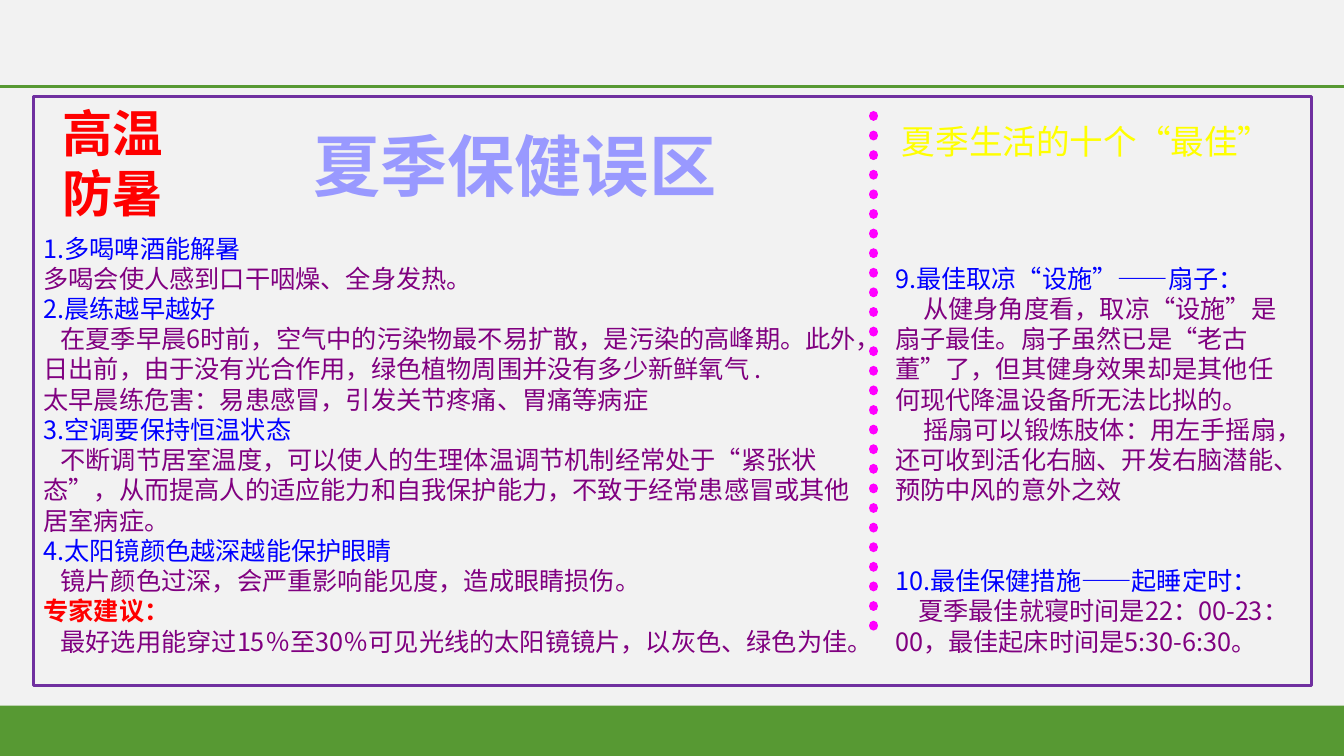
"""Build the summer health slide with its two text columns."""
from dataclasses import dataclass

from lxml import etree
from pptx import Presentation, util as u
from pptx.dml.color import RGBColor
from pptx.enum import dml, lang, shapes, text
from pptx.oxml import ns

COLOURS = {
    "paper": "F2F2F2", "green": "579933", "frame": "7030A0", "dots": "FF00FF",
    "warning": "FF0000", "topic": "0000FF", "body": "800080",
    "headline": "9999FF", "best": "FFFF00",
}
FONT = "Noto Sans CJK SC"
WIDTH, HEIGHT = u.Inches(13.33), u.Inches(7.5)
LINE_RATIO = 1.2


@dataclass
class Area:
    """Position and size in percent of the slide."""
    left: float
    top: float
    width: float
    height: float

    def lengths(self) -> dict:
        return {
            "left": int(WIDTH * self.left / 100),
            "top": int(HEIGHT * self.top / 100),
            "width": int(WIDTH * self.width / 100),
            "height": int(HEIGHT * self.height / 100),
        }


@dataclass
class Line:
    """One paragraph with its look."""
    wording: str
    colour: str = "body"
    size: int = 18
    bold: bool = False
    indent: float = 0
    before: float = 0
    align: text.PP_ALIGN = text.PP_ALIGN.LEFT


def apply(target, values: dict) -> None:
    for key, value in values.items():
        setattr(target, key, value)


def rgb(name: str) -> RGBColor:
    return RGBColor.from_string(COLOURS[name])


def write(holder, area: Area, lines: list[Line], wrap: bool = True) -> None:
    apply(holder, area.lengths())
    frame = holder.text_frame
    apply(frame, {
        "word_wrap": wrap,
        "auto_size": text.MSO_AUTO_SIZE.NONE,
        "vertical_anchor": text.MSO_ANCHOR.TOP,
        "margin_left": u.Inches(0.1), "margin_right": u.Inches(0.1),
        "margin_top": u.Inches(0.05), "margin_bottom": u.Inches(0.05),
    })
    for number, line in enumerate(lines):
        paragraph = frame.add_paragraph() if number else frame.paragraphs[0]
        properties = paragraph._p.get_or_add_pPr()
        properties.set("marL", "0")
        properties.set("indent", str(u.Inches(line.indent)))
        etree.SubElement(properties, ns.qn("a:buNone"))
        apply(paragraph, {
            "alignment": line.align,
            "line_spacing": u.Pt(line.size * LINE_RATIO),
            "space_before": u.Pt(line.before),
            "space_after": u.Pt(0),
        })
        run = paragraph.add_run()
        run.text = line.wording
        apply(run.font, {
            "name": FONT, "size": u.Pt(line.size), "bold": line.bold,
            "language_id": lang.MSO_LANGUAGE_ID.SIMPLIFIED_CHINESE,
        })
        run.font.color.rgb = rgb(line.colour)
        east_asian = etree.SubElement(run._r.get_or_add_rPr(), ns.qn("a:ea"))
        east_asian.set("typeface", FONT)


def add_box(slide, area: Area, fill: str = "", outline: str = "") -> None:
    box = slide.shapes.add_shape(shapes.MSO_SHAPE.RECTANGLE, **area.lengths())
    box.shadow.inherit = False
    for part, colour in ((box.fill, fill), (box.line.fill, outline)):
        if colour:
            part.solid()
            part.fore_color.rgb = rgb(colour)
        else:
            part.background()
    if outline:
        box.line.width = u.Pt(2.25)


def add_rule(slide, area: Area, colour: str, weight: float, dotted: bool = False) -> None:
    place = area.lengths()
    rule = slide.shapes.add_connector(
        shapes.MSO_CONNECTOR.STRAIGHT, place["left"], place["top"],
        place["left"] + place["width"], place["top"] + place["height"])
    rule.line.color.rgb = rgb(colour)
    rule.line.width = u.Pt(weight)
    if dotted:
        rule.line.dash_style = dml.MSO_LINE.ROUND_DOT
        rule.line._get_or_add_ln().set("cap", "rnd")
    etree.SubElement(rule._element.spPr, ns.qn("a:effectLst"))


MISTAKES = [
    Line("1.多喝啤酒能解暑", "topic"),
    Line("多喝会使人感到口干咽燥、全身发热。"),
    Line("2.晨练越早越好", "topic"),
    Line("在夏季早晨6时前，空气中的污染物最不易扩散，是污染的高峰期。此外，日出前，"
         "由于没有光合作用，绿色植物周围并没有多少新鲜氧气 .", indent=0.17),
    Line("太早晨练危害：易患感冒，引发关节疼痛、胃痛等病症"),
    Line("3.空调要保持恒温状态", "topic"),
    Line("不断调节居室温度，可以使人的生理体温调节机制经常处于“紧张状态”，从而提高人的"
         "适应能力和自我保护能力，不致于经常患感冒或其他居室病症。", indent=0.17),
    Line("4.太阳镜颜色越深越能保护眼睛", "topic"),
    Line("镜片颜色过深，会严重影响能见度，造成眼睛损伤。", indent=0.17),
    Line("专家建议：", "warning", bold=True),
    Line("最好选用能穿过15％至30％可见光线的太阳镜镜片，以灰色、绿色为佳。", indent=0.17),
]
BEST_HABITS = [
    Line("9.最佳取凉“设施”——扇子：", "topic"),
    Line("从健身角度看，取凉“设施”是扇子最佳。扇子虽然已是“老古董”了，"
         "但其健身效果却是其他任何现代降温设备所无法比拟的。", indent=0.28),
    Line("摇扇可以锻炼肢体：用左手摇扇，还可收到活化右脑、开发右脑潜能、"
         "预防中风的意外之效", indent=0.28),
    Line("10.最佳保健措施——起睡定时：", "topic", before=2 * 18 * LINE_RATIO),
    Line("夏季最佳就寝时间是22：00-23：00，最佳起床时间是5:30-6:30。", indent=0.23),
]


def main() -> None:
    deck = Presentation()
    apply(deck, {"slide_width": WIDTH, "slide_height": HEIGHT})
    slide = deck.slides.add_slide(deck.slide_layouts[3])
    slide.background.fill.solid()
    slide.background.fill.fore_color.rgb = rgb("paper")

    add_box(slide, Area(0, 93.33, 100, 6.67), fill="green")
    add_rule(slide, Area(0, 11.5, 100, 0), "green", 2.25)
    add_box(slide, Area(2.48, 12.8, 95.1, 77.87), outline="frame")
    add_rule(slide, Area(65, 15.33, 0, 68), "dots", 7, dotted=True)

    headline, mistakes, habits = slide.placeholders
    centre = text.PP_ALIGN.CENTER
    write(headline, Area(18.3, 15.73, 40, 12),
          [Line("夏季保健误区", "headline", 48, True, align=centre)], wrap=False)
    write(mistakes, Area(2.48, 30.13, 62.48, 57.87), MISTAKES)
    write(habits, Area(65.85, 34.13, 30.82, 53.87), BEST_HABITS)

    heat = slide.shapes.add_textbox(0, 0, 0, 0)
    write(heat, Area(3.9, 12.8, 10.05, 17.33), [Line("高温防暑", "warning", 36, True)])
    best = slide.shapes.add_textbox(0, 0, 0, 0)
    write(best, Area(65.85, 15.33, 30, 11.07),
          [Line("夏季生活的十个“最佳”", "best", 24, align=centre)], wrap=False)

    deck.save("out.pptx")


if __name__ == "__main__":
    main()
